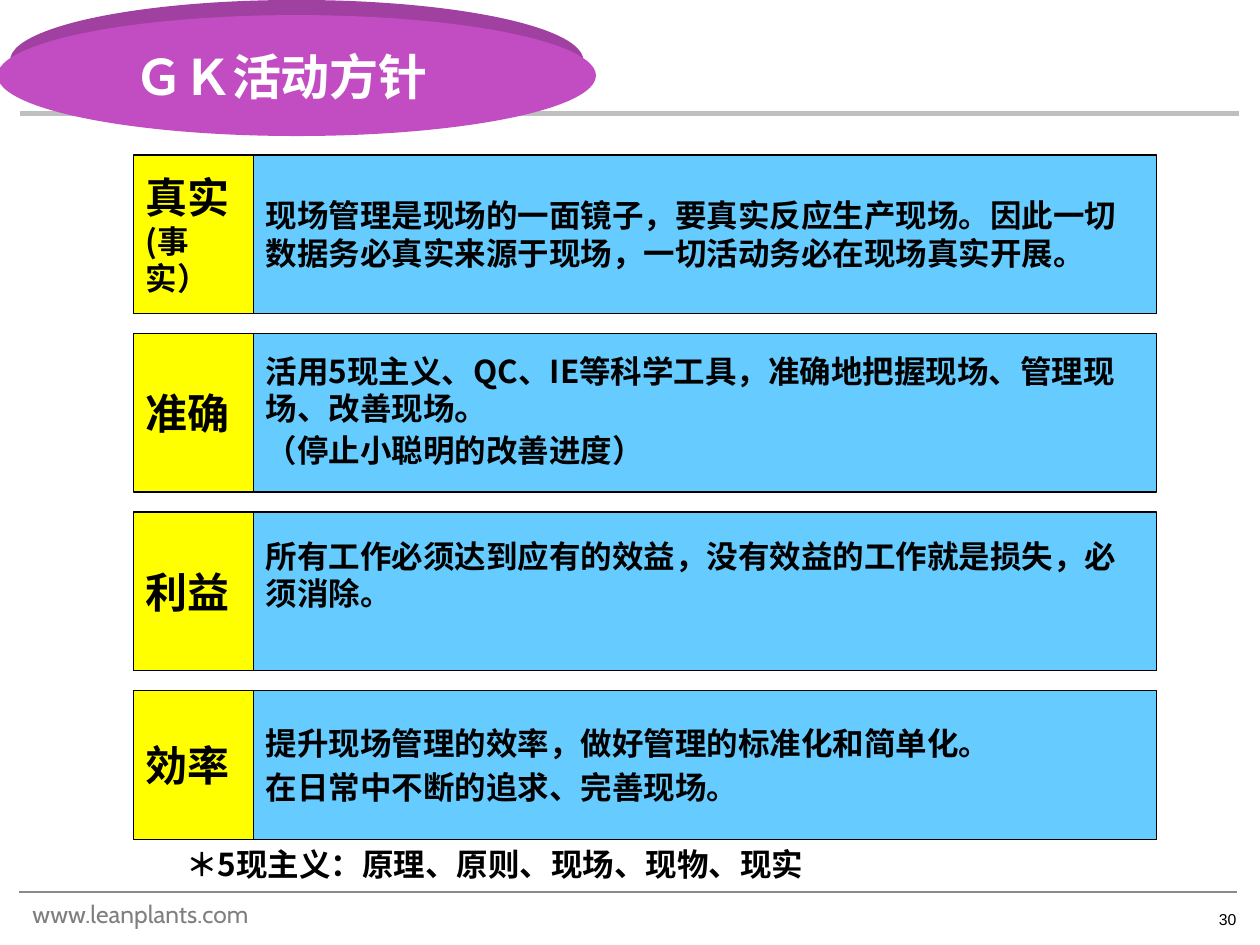
"""Build the GK activity policy slide: four labelled principles under an oval title."""
import dataclasses

import pptx
import pptx.dml.color
import pptx.enum.shapes
import pptx.enum.text
import pptx.oxml.ns
import pptx.util
from lxml import etree
from pptx.util import Inches


@dataclasses.dataclass(frozen=True)
class Theme:
    black: str = "000000"
    white: str = "FFFFFF"
    grey: str = "7F7F7F"
    header_rule: str = "BFBFBF"
    footer_rule: str = "8B8B8B"
    label: str = "FFFF00"
    body: str = "66CCFF"
    oval: str = "C24CC2"
    oval_edge: str = "A040A0"
    title_size: int = 28
    label_size: int = 24
    stop_size: int = 20
    body_size: int = 18
    site_size: int = 14
    number_size: int = 9
    sc: str = "Noto Sans CJK SC"
    jp: str = "Noto Sans CJK JP"


T = Theme()
RGB = pptx.dml.color.RGBColor.from_string
SHAPE = pptx.enum.shapes.MSO_SHAPE
ALIGN = pptx.enum.text.PP_ALIGN
MIDDLE = pptx.enum.text.MSO_ANCHOR.MIDDLE
qn = pptx.oxml.ns.qn


def add_shape(kind, x, y, w, h, fill, line=None):
    sp = s.shapes.add_shape(kind, Inches(x), Inches(y), Inches(w), Inches(h))
    sp.shadow.inherit = False
    sp.fill.solid()
    sp.fill.fore_color.rgb = RGB(fill)
    if line:
        sp.line.color.rgb = RGB(line)
        sp.line.width = pptx.util.Pt(0.75)
    else:
        sp.line.fill.background()
    return sp


def write(tf, paragraphs, font=T.sc, color=T.black, bold=True, align=ALIGN.LEFT, before=0, spacing=1.0):
    tf.word_wrap = True
    tf.vertical_anchor = MIDDLE
    for i, runs in enumerate(paragraphs):
        p = tf.add_paragraph() if i else tf.paragraphs[0]
        p.alignment = align
        p.line_spacing = spacing
        p.space_before = pptx.util.Pt(before if i else 0)
        for text, size in runs:
            r = p.add_run()
            r.text = text
            r.font.size = pptx.util.Pt(size)
            r.font.bold = bold
            r.font.color.rgb = RGB(color)
            r.font.name = font
            etree.SubElement(r.font._element, qn("a:ea"), typeface=font)


prs = pptx.Presentation()
prs.slide_width, prs.slide_height = Inches(10), Inches(7.5)
s = prs.slides.add_slide(prs.slide_layouts[5])
title = s.shapes.title

for x, y, color, width in [(0.15, 7.08, T.footer_rule, 1), (0.16, 0.9, T.header_rule, 3)]:
    rule = s.shapes.add_connector(
        pptx.enum.shapes.MSO_CONNECTOR.STRAIGHT, Inches(x), Inches(y), Inches(x + 9.67), Inches(y))
    rule.line.color.rgb = RGB(color)
    rule.line.width = pptx.util.Pt(width)
    etree.SubElement(rule._element.spPr, qn("a:effectLst"))

add_shape(SHAPE.OVAL, 0.08, 0, 4.55, 0.96, T.oval_edge)
oval = add_shape(SHAPE.OVAL, -0.02, 0.12, 4.75, 0.96, T.oval)
title.left, title.top, title.width, title.height = Inches(0.73), Inches(0.3), Inches(3), Inches(0.6)
write(title.text_frame, [[("ＧＫ活动方针", T.title_size)]], color=T.white, align=ALIGN.CENTER)
oval._element.addnext(title._element)

B = T.body_size
rows = [
    (1.26, [[("真实", T.label_size)], [("(事实）", B)]],
     [[("现场管理是现场的一面镜子，要真实反应生产现场。因此一切数据务必真实来源于现场，一切活动务必在现场真实开展。", B)]],
     T.sc, 1.0, 0.05),
    (1.26, [[("准确", T.label_size)]],
     [[("活用5现主义、QC、IE等科学工具，准确地把握现场、管理现场、改善现场", B), ("。", T.stop_size)],
      [("（停止小聪明的改善进度）", B)]],
     T.jp, 0.9, 0.05),
    (1.26, [[("利益", T.label_size)]],
     [[("所有工作必须达到应有的效益，没有效益的工作就是损失，必须消除。", B)]],
     T.sc, 1.0, 0.32),
    (1.18, [[("効率", T.label_size)]],
     [[("提升现场管理的效率，做好管理的标准化和简单化。", B)],
      [("在日常中不断的追求、完善现场。", B)]],
     T.sc, 1.0, 0.05),
]
top = 1.23
for height, label, body, font, spacing, bottom in rows:
    sp = add_shape(SHAPE.RECTANGLE, 2.01, top, 7.17, height, T.body, T.black)
    sp.text_frame.margin_bottom = Inches(bottom)
    write(sp.text_frame, body, font, before=4, spacing=spacing)
    sp = add_shape(SHAPE.RECTANGLE, 1.06, top, 0.95, height, T.label, T.black)
    write(sp.text_frame, label)
    top += height + 0.157

captions = [
    (1.38, 6.66, 5.43, 0.4, "＊5现主义：原理、原则、现场、现物、现实", B, T.jp, T.black, True, ALIGN.LEFT),
    (0.16, 7.08, 2.34, 0.34, "www.leanplants.com", T.site_size, "Cabin", T.grey, False, ALIGN.LEFT),
    (9.5, 7.16, 0.41, 0.27, "30", T.number_size, "Arial", T.black, False, ALIGN.RIGHT),
]
for x, y, w, h, text, size, font, color, bold, align in captions:
    tb = s.shapes.add_textbox(Inches(x), Inches(y), Inches(w), Inches(h))
    write(tb.text_frame, [[(text, size)]], font, color, bold, align)

prs.save("out.pptx")
